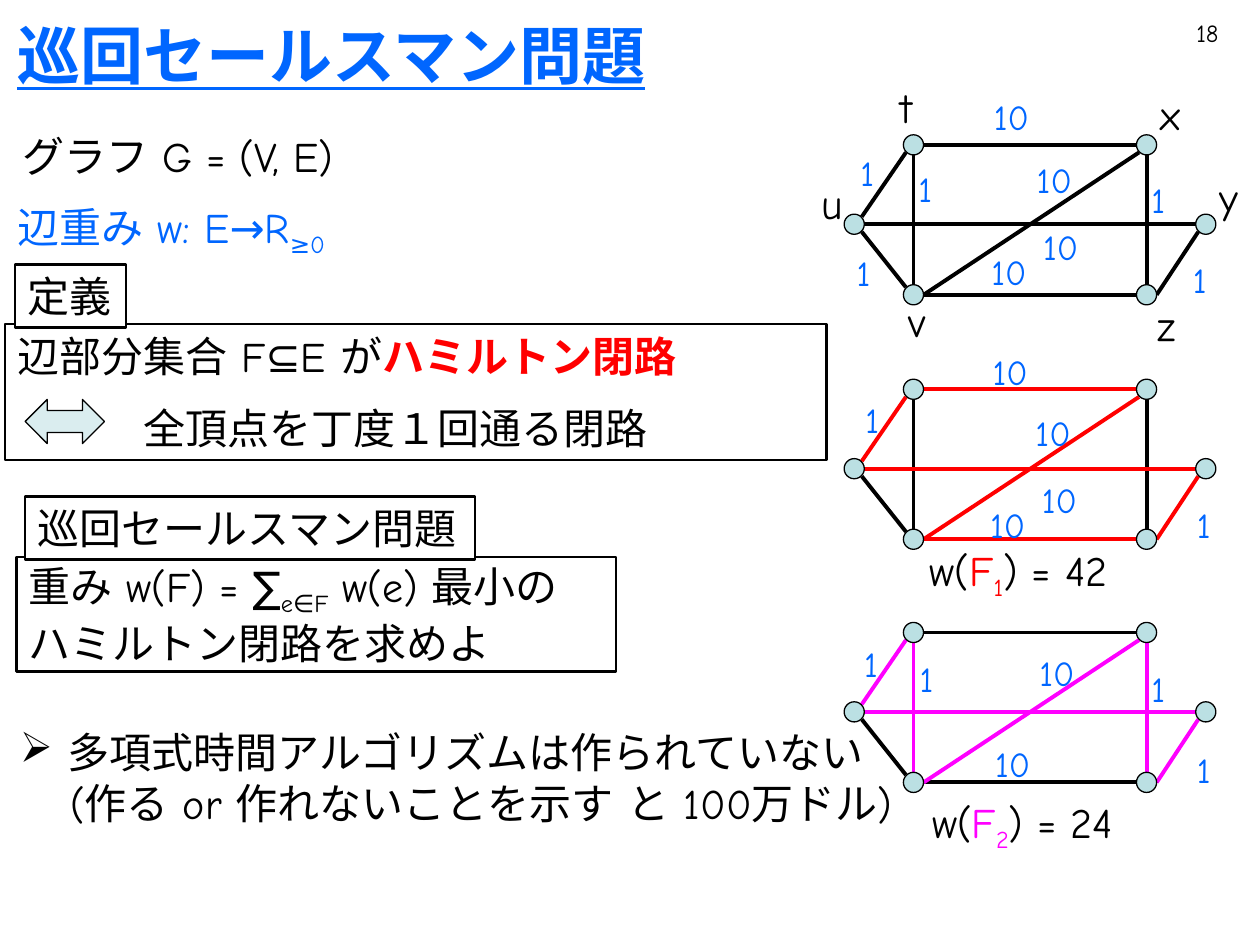
from lxml import etree
from pptx import Presentation
from pptx import util as u
from pptx.dml.color import RGBColor
from pptx.enum import shapes, text
from pptx.oxml.ns import qn

BLACK = RGBColor(0x00, 0x00, 0x00)
WHITE = RGBColor(0xFF, 0xFF, 0xFF)
BLUE = RGBColor(0x00, 0x66, 0xFF)
RED = RGBColor(0xFF, 0x00, 0x00)
MAGENTA = RGBColor(0xFF, 0x00, 0xFF)
NODE = RGBColor(0xBB, 0xE0, 0xE3)
ARROW = RGBColor(0xDA, 0xED, 0xEF)
LATIN = "Comic Neue"
CJK = "Noto Sans CJK JP"

prs = Presentation()
prs.slide_width, prs.slide_height = u.Inches(10), u.Inches(7.5)
s = prs.slides.add_slide(prs.slide_layouts[6])


def add_shape(kind, x, y, w, h, fill=None, line=0.75):
    sp = s.shapes.add_shape(kind, u.Inches(x), u.Inches(y), u.Inches(w), u.Inches(h))
    sp.shadow.inherit = False
    if fill is None:
        sp.fill.background()
    else:
        sp.fill.solid()
        sp.fill.fore_color.rgb = fill
    sp.line.color.rgb = BLACK
    sp.line.width = u.Pt(line)
    return sp


def add_text(box, paragraphs, size=24, color=BLACK, wrap=False, font=LATIN):
    if isinstance(box, tuple):
        box = s.shapes.add_textbox(*[u.Inches(v) for v in box])
    tf = box.text_frame
    tf.word_wrap = wrap
    tf.auto_size = text.MSO_AUTO_SIZE.SHAPE_TO_FIT_TEXT
    for i, runs in enumerate(paragraphs):
        p = tf.paragraphs[0] if i == 0 else tf.add_paragraph()
        p.alignment = text.PP_ALIGN.LEFT
        p.font.size = u.Pt(size)
        p.font.color.rgb = color
        p.font.name = font
        etree.SubElement(p._p.pPr.find(qn("a:defRPr")), qn("a:ea"), typeface=font)
        for words, run_color, baseline in runs:
            r = p.add_run()
            r.text = words
            r.font.color.rgb = run_color or color
            if baseline:
                r._r.get_or_add_rPr().set("baseline", str(baseline * 1000))
    return tf


tf = add_text((0.04, 0.05, 6.55, 0.76), [[("巡回セールスマン問題", None, 0)]], 36, BLUE, font=CJK)
tf.auto_size = text.MSO_AUTO_SIZE.NONE
tf.vertical_anchor = text.MSO_ANCHOR.MIDDLE
tf.paragraphs[0].font.bold = True
tf.paragraphs[0].font.underline = True

tf = add_text((7.44, 0.09, 2.33, 0.52), [[("18", None, 0)]], 14, wrap=True)
tf.paragraphs[0].alignment = text.PP_ALIGN.RIGHT

add_text((0.08, 0.99, 2.87, 0.5), [[("グラフ G = (V, E)", None, 0)]])
add_text((0.04, 1.55, 2.79, 0.5), [[("辺重み w: E→R", None, 0), ("≥0", None, -25)]], color=BLUE)

rect = shapes.MSO_SHAPE.RECTANGLE
problem = add_shape(rect, 0.13, 4.42, 4.76, 0.91, line=1.5)
add_text(problem, [
    [("重み w(F) = ∑", None, 0), ("e∈F", None, -25), (" w(e) 最小の", None, 0)],
    [("ハミルトン閉路を求めよ", None, 0)],
])
problem_label = add_shape(rect, 0.2, 3.94, 3.57, 0.5, WHITE, 1.5)
add_text(problem_label, [[("巡回セールスマン問題", None, 0)]])

definition = add_shape(rect, 0.04, 2.57, 6.52, 1.08, line=1.5)
tf = add_text(definition, [
    [("辺部分集合 F⊆E が", None, 0), ("ハミルトン閉路", RED, 0)],
    [("全頂点を丁度１回通る閉路", None, 0)],
], wrap=True)
tf.paragraphs[0].runs[1].font.bold = True
tf.paragraphs[1].space_before = u.Pt(12)
tf.paragraphs[1]._p.pPr.set("marL", str(u.Inches(1)))
definition_label = add_shape(rect, 0.12, 2.1, 0.88, 0.5, WHITE, 1.5)
add_text(definition_label, [[("定義", None, 0)]])
add_shape(shapes.MSO_SHAPE.LEFT_RIGHT_ARROW, 0.2, 3.17, 0.63, 0.35, ARROW)

R = 0.08
D = 0.06
sites = {"N": (0, -R), "S": (0, R), "E": (R, 0), "W": (-R, 0),
         "NE": (D, -D), "NW": (-D, -D), "SE": (D, D), "SW": (-D, D)}
nodes = {"t": (7.25, 1.15), "x": (9.1, 1.15), "u": (6.78, 1.78),
         "y": (9.57, 1.78), "v": (7.25, 2.34), "z": (9.1, 2.34)}
edges = [("t", "SW", "u", "NE"), ("u", "SE", "v", "NW"), ("t", "E", "x", "W"),
         ("v", "E", "z", "W"), ("x", "S", "z", "N"), ("t", "S", "v", "N"),
         ("z", "E", "y", "SW"), ("v", "E", "x", "SW"), ("u", "E", "y", "W")]
graphs = [
    (0, BLACK, [],
     [("10", 7.79, 0.71), ("1", 6.73, 1.15), ("10", 8.13, 1.21), ("10", 8.18, 1.74),
      ("10", 7.77, 1.94), ("1", 7.19, 1.28), ("1", 6.7, 1.95), ("1", 9.37, 2), ("1", 9.04, 1.37)]),
    (1.94, RED, ["tu", "tx", "vz", "zy", "vx", "uy"],
     [("1", 6.77, 3.11), ("1", 9.4, 3.95), ("10", 7.78, 2.73),
      ("10", 8.12, 3.22), ("10", 8.17, 3.75), ("10", 7.76, 3.95)]),
    (3.87, MAGENTA, ["tu", "xz", "tv", "zy", "vx", "uy"],
     [("1", 6.76, 5.05), ("10", 7.8, 5.84), ("1", 9.4, 5.89),
      ("1", 9.04, 5.25), ("10", 8.15, 5.12), ("1", 7.2, 5.17)]),
]
for dy, color, tour, weights in graphs:
    for a, site_a, b, site_b in edges:
        x1, y1 = [n + d for n, d in zip(nodes[a], sites[site_a])]
        x2, y2 = [n + d for n, d in zip(nodes[b], sites[site_b])]
        c = s.shapes.add_connector(shapes.MSO_CONNECTOR.STRAIGHT, u.Inches(x1), u.Inches(y1 + dy),
                                   u.Inches(x2), u.Inches(y2 + dy))
        c.line.color.rgb = color if a + b in tour else BLACK
        c.line.width = u.Pt(2.25)
        etree.SubElement(c._element.spPr, qn("a:effectLst"))
    for x, y in nodes.values():
        add_shape(shapes.MSO_SHAPE.OVAL, x - R, y + dy - R, 2 * R, 2 * R, NODE)
    for weight, x, y in weights:
        add_text((x, y, 0.5 if weight == "10" else 0.33, 0.44), [[(weight, None, 0)]], 20, BLUE)

for name, x, y in [("t", 7.05, 0.6), ("u", 6.42, 1.36), ("v", 7.11, 2.3),
                   ("z", 9.09, 2.33), ("y", 9.58, 1.31), ("x", 9.11, 0.65)]:
    add_text((x, y, 0.38, 0.5), [[(name, None, 0)]])

for x, y, w, index, total, color in [(7.28, 4.27, 1.77, "1", "42", RED),
                                     (7.3, 6.27, 1.8, "2", "24", MAGENTA)]:
    add_text((x, y, w, 0.5), [[("w(", None, 0), ("F", color, 0), (index, color, -25),
                               (f") = {total}", None, 0)]])

tf = add_text((0.06, 5.72, 7.19, 0.91), [
    [("多項式時間アルゴリズムは作られていない", None, 0)],
    [("(作る or 作れないことを示す と 100万ドル)", None, 0)],
], wrap=True)
pPr = tf.paragraphs[0]._p.pPr
pPr.set("marL", str(u.Inches(0.38)))
pPr.set("indent", str(u.Inches(-0.38)))
bullet = etree.Element(qn("a:buChar"), char="➢")
pPr.find(qn("a:defRPr")).addprevious(bullet)
tf.paragraphs[1]._p.pPr.set("indent", str(u.Inches(0.4)))

prs.save("out.pptx")
